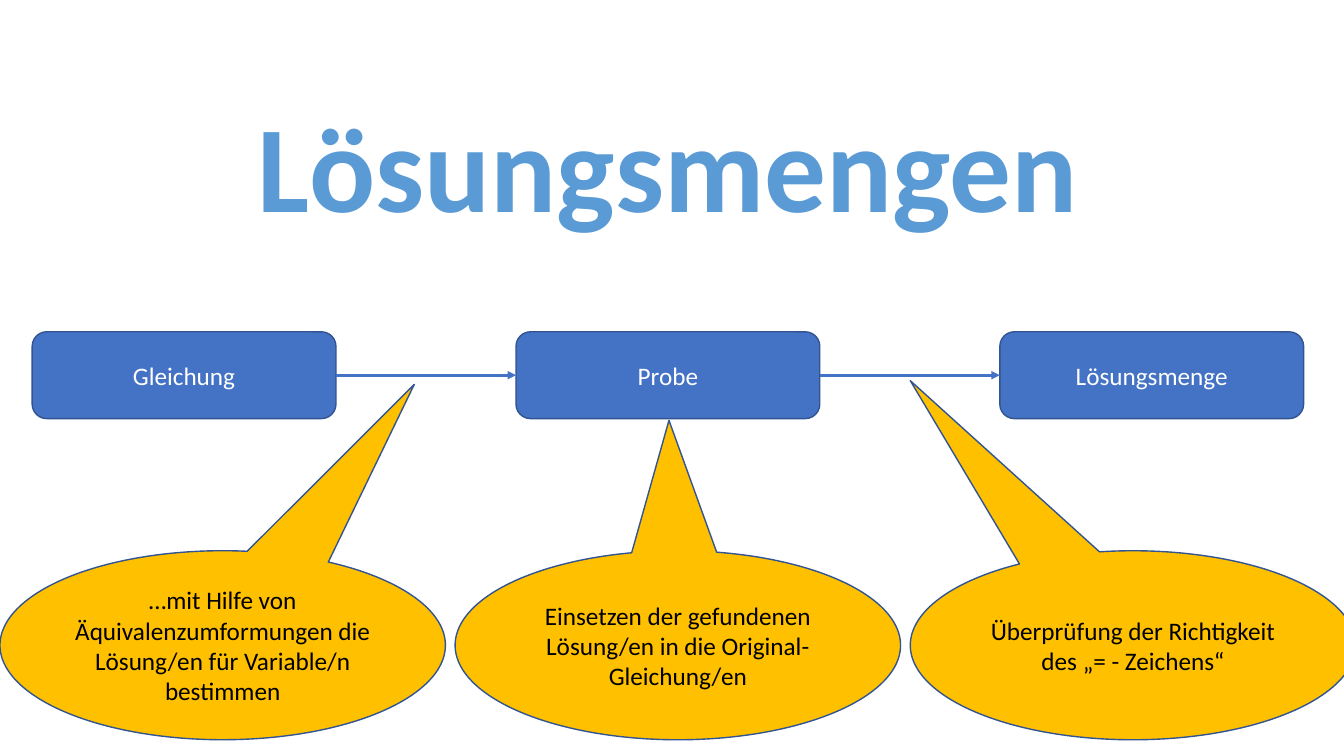
from pptx import Presentation
from pptx.dml.color import RGBColor
from pptx.enum.shapes import MSO_CONNECTOR, MSO_SHAPE
from pptx.enum.text import MSO_ANCHOR, MSO_AUTO_SIZE, PP_ALIGN
from pptx.oxml.ns import qn
from pptx.util import Pt
from lxml.etree import SubElement

BLUE = RGBColor(0x44, 0x72, 0xC4)
OUTLINE = RGBColor(0x32, 0x54, 0x91)
AMBER = RGBColor(0xFF, 0xC0, 0x00)
HEADING = RGBColor(0x5B, 0x9B, 0xD5)
WHITE = RGBColor(0xFF, 0xFF, 0xFF)
BLACK = RGBColor(0x00, 0x00, 0x00)


class Deck:
    """Holds the text style and the current slide, and draws its elements."""

    def __init__(self, prs):
        self.s = prs.slides.add_slide(prs.slide_layouts[5])
        self.font = {"name": "Calibri", "size": Pt(18), "bold": False}

    def text(self, sp, text, color, frame, **font):
        tf = sp.text_frame
        for name, value in frame.items():
            setattr(tf, name, value)
        p = tf.paragraphs[0]
        p.alignment = PP_ALIGN.CENTER
        r = p.add_run()
        r.text = text
        for name, value in {**self.font, **font}.items():
            setattr(r.font, name, value)
        r.font.color.rgb = color

    def title(self, text, left, top, width, height):
        sp = self.s.shapes.title
        place = {"left": left, "top": top, "width": width, "height": height}
        for name, value in place.items():
            setattr(sp, name, Pt(value))
        frame = {"word_wrap": False, "vertical_anchor": MSO_ANCHOR.TOP,
                 "auto_size": MSO_AUTO_SIZE.SHAPE_TO_FIT_TEXT}
        self.text(sp, text, HEADING, frame, size=Pt(88), bold=True)

    def shape(self, kind, text, place, fill, color, adjust=()):
        sp = self.s.shapes.add_shape(kind, *map(Pt, place))
        sp.shadow.inherit = False
        for i, value in enumerate(adjust):
            sp.adjustments[i] = value
        sp.fill.solid()
        sp.fill.fore_color.rgb = fill
        sp.line.color.rgb = OUTLINE
        sp.line.width = Pt(1)
        frame = {"word_wrap": True, "vertical_anchor": MSO_ANCHOR.MIDDLE}
        self.text(sp, text, color, frame)
        return sp

    def arrow(self, start, end):
        c = self.s.shapes.add_connector(MSO_CONNECTOR.STRAIGHT, 0, 0, 0, 0)
        c.begin_connect(start, 3)
        c.end_connect(end, 1)
        c.line.color.rgb = BLUE
        c.line.width = Pt(2)
        SubElement(c.line._get_or_add_ln(), qn("a:tailEnd"), type="triangle")
        SubElement(c._element.spPr, qn("a:effectLst"))


def main():
    prs = Presentation()
    prs.slide_width, prs.slide_height = Pt(960), Pt(540)
    deck = Deck(prs)
    deck.title("Lösungsmengen", 173.5, 60, 607, 114)

    steps = ["Gleichung", "Probe", "Lösungsmenge"]
    boxes = [deck.shape(MSO_SHAPE.ROUNDED_RECTANGLE, step,
                        (23 + 345.6 * i, 237, 217, 62), BLUE, WHITE)
             for i, step in enumerate(steps)]
    for start, end in zip(boxes, boxes[1:]):
        deck.arrow(start, end)

    notes = [
        ("…mit Hilfe von Äquivalenzumformungen die Lösung/en für Variable/n "
         "bestimmen", (0.43, -1.38)),
        ("Einsetzen der gefundenen Lösung/en in die Original-Gleichung/en",
         (-0.02, -1.19)),
        ("Überprüfung der Richtigkeit des „= - Zeichens“", (-0.5, -1.4)),
    ]
    for i, (note, tip) in enumerate(notes):
        deck.shape(MSO_SHAPE.OVAL_CALLOUT, note,
                   (325.1 * i, 393.4, 318.2, 135), AMBER, BLACK, tip)

    prs.save("out.pptx")


if __name__ == "__main__":
    main()
